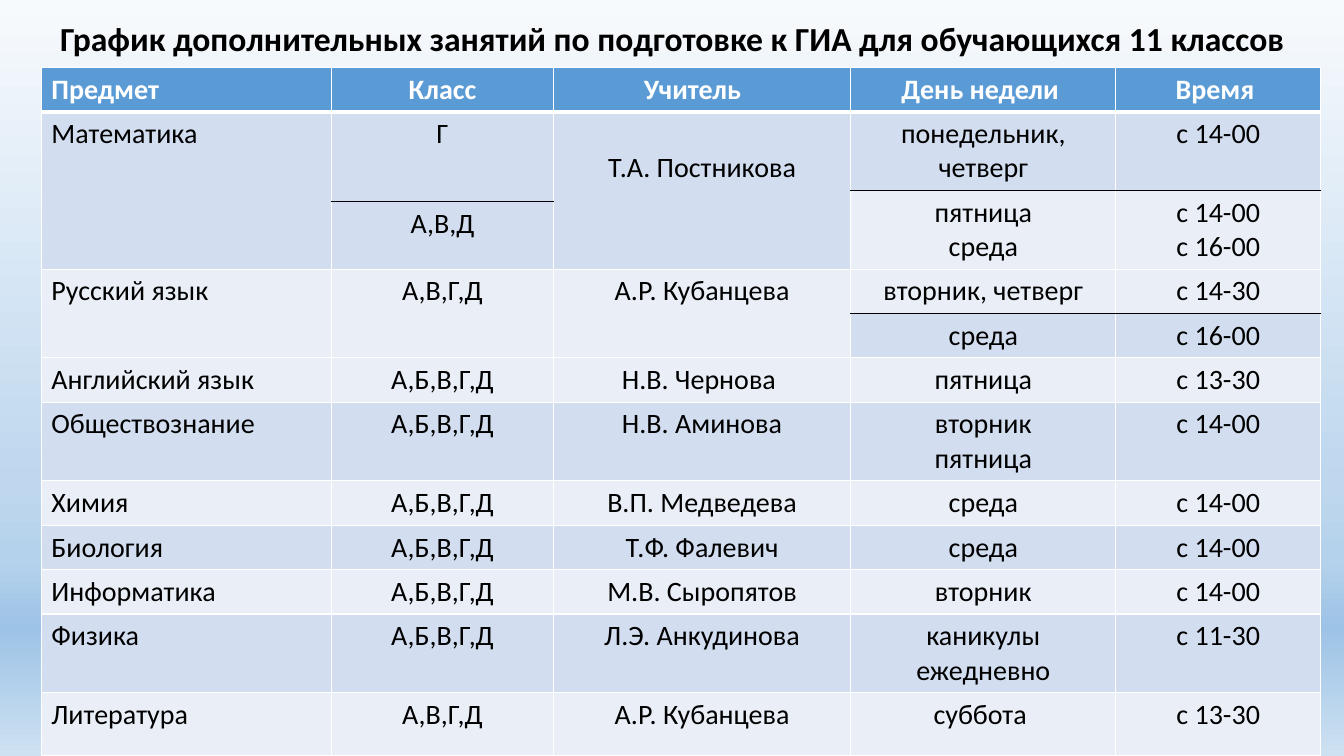
"""Build the slide with the timetable of extra exam preparation classes."""
from lxml.etree import SubElement
from pptx import Presentation
from pptx.dml.color import RGBColor
from pptx.enum.text import MSO_ANCHOR, PP_ALIGN
from pptx.oxml.ns import qn
from pptx.util import Pt


def write(frame, text, size=20, color="000000", bold=False, align=PP_ALIGN.CENTER, spacing=1.0):
    for index, line in enumerate(text.split("\n")):
        paragraph = frame.add_paragraph() if index else frame.paragraphs[0]
        paragraph.alignment = align
        paragraph.line_spacing = spacing
        run = paragraph.add_run()
        run.text = line
        run.font.name = "Calibri"
        run.font.size = Pt(size)
        run.font.bold = bold
        run.font.color.rgb = RGBColor.from_string(color)


def draw_border(cell, position, side, color, width):
    line = cell._tc.get_or_add_tcPr().makeelement(qn(f"a:ln{side}"), {"w": str(Pt(width))})
    fill = SubElement(line, qn("a:solidFill"))
    SubElement(fill, qn("a:srgbClr"), val=color)
    cell._tc.tcPr.insert(position, line)


presentation = Presentation()
presentation.slide_width = Pt(960)
presentation.slide_height = Pt(540)
slide = presentation.slides.add_slide(presentation.slide_layouts[6])

background = slide.background.fill
background.gradient()
background.gradient_angle = 270
stop_list = slide.element.find(".//" + qn("a:gsLst"))
for stop in list(stop_list):
    stop_list.remove(stop)
for percent, color in [(0, "F7FAFD"), (64, "BED7EE"), (74, "B5D2EC"), (83, "9DC3E6"), (100, "CEE1F2")]:
    stop = SubElement(stop_list, qn("a:gs"), pos=str(percent * 1000))
    SubElement(stop, qn("a:srgbClr"), val=color)

title = slide.shapes.add_textbox(Pt(29.5), Pt(10), Pt(901.5), Pt(38)).text_frame
title.word_wrap = True
title.vertical_anchor = MSO_ANCHOR.MIDDLE
write(title, "График дополнительных занятий по подготовке к ГИА для обучающихся 11 классов",
      size=24, bold=True, spacing=0.9)

ONE_LINE, TWO_LINES = 31.7, 56.2
SPLIT = 8
timetable = [
    (ONE_LINE, ["Предмет", "Класс", "Учитель", "День недели ", "Время "]),
    (TWO_LINES, ["Математика", "Г", "Т.А. Постникова", "понедельник, четверг", "с 14-00"]),
    (SPLIT, ["", "", "", "пятница\nсреда", "с 14-00\nс 16-00"]),
    (TWO_LINES - SPLIT, ["", "А,В,Д", "", "", ""]),
    (ONE_LINE, ["Русский язык", "А,В,Г,Д", "А.Р. Кубанцева", "вторник, четверг", "с 14-30"]),
    (ONE_LINE, ["", "", "", "среда", "с 16-00"]),
    (ONE_LINE, ["Английский язык", "А,Б,В,Г,Д", "Н.В. Чернова ", "пятница", "с 13-30"]),
    (TWO_LINES, ["Обществознание", "А,Б,В,Г,Д", "Н.В. Аминова", "вторник\nпятница", "с 14-00"]),
    (ONE_LINE, ["Химия", "А,Б,В,Г,Д", "В.П. Медведева", "среда", "с 14-00"]),
    (ONE_LINE, ["Биология", "А,Б,В,Г,Д", "Т.Ф. Фалевич", "среда", "с 14-00"]),
    (ONE_LINE, ["Информатика", "А,Б,В,Г,Д", "М.В. Сыропятов", "вторник", "с 14-00"]),
    (TWO_LINES, ["Физика", "А,Б,В,Г,Д", "Л.Э. Анкудинова", "каникулы ежедневно", "с 11-30"]),
    (45, ["Литература", "А,В,Г,Д", "А.Р. Кубанцева", "суббота ", "с 13-30"]),
]
column_widths = [207.4, 158.4, 212.4, 189.4, 146.2]
table_height = sum(height for height, _ in timetable)
table = slide.shapes.add_table(len(timetable), len(column_widths), Pt(29.5), Pt(48.2),
                               Pt(sum(column_widths)), Pt(table_height)).table
for column, width in zip(table.columns, column_widths):
    column.width = Pt(width)

merges = [(1, 0, 3), (1, 1, 2), (1, 2, 3), (2, 3, 3), (2, 4, 3), (4, 0, 5), (4, 1, 5), (4, 2, 5)]
for first_row, column, last_row in merges:
    table.cell(first_row, column).merge(table.cell(last_row, column))

black_below = {(1, 1), (1, 3), (1, 4), (2, 1), (4, 3), (4, 4)}
black_above = {(2, 3), (2, 4), (3, 1), (5, 3), (5, 4)}
for row, (height, texts) in enumerate(timetable):
    table.rows[row].height = Pt(height)
    header = row == 0
    for column, text in enumerate(texts):
        cell = table.cell(row, column)
        top = ("000000", 1) if (row, column) in black_above else ("FFFFFF", 3 if row == 1 else 1)
        bottom = ("000000", 1) if (row, column) in black_below else ("FFFFFF", 3 if header else 1)
        edges = {"L": ("FFFFFF", 1), "R": ("FFFFFF", 1), "T": top, "B": bottom}
        for position, (side, (color, width)) in enumerate(edges.items()):
            draw_border(cell, position, side, color, width)
        cell.fill.solid()
        band = "5B9BD5" if header else "D2DEEF" if row % 2 else "EAEFF7"
        cell.fill.fore_color.rgb = RGBColor.from_string(band)
        if text:
            write(cell.text_frame, text, bold=header, color="FFFFFF" if header else "000000",
                  align=PP_ALIGN.CENTER if column else PP_ALIGN.LEFT)

table.cell(0, 2).margin_right = Pt(21)
table.cell(1, 2).margin_top = Pt(28)

presentation.save("out.pptx")
